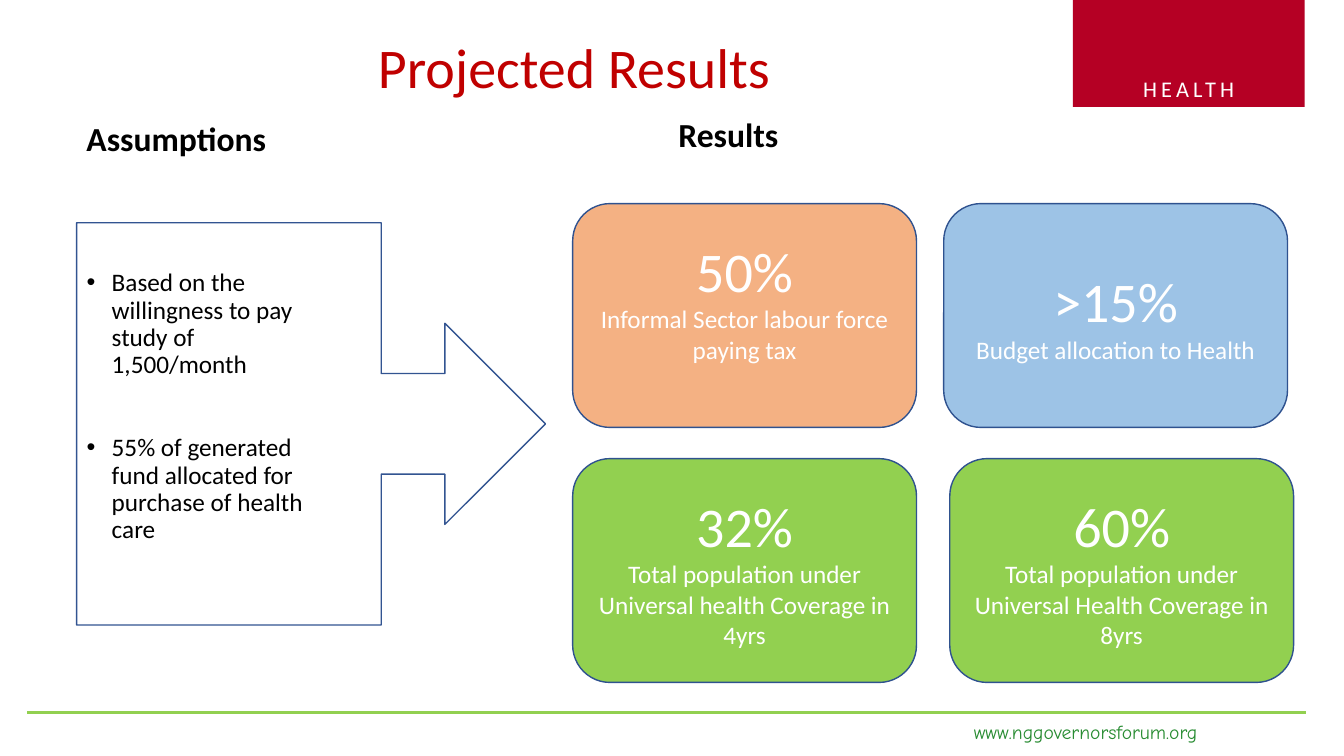
from lxml.etree import SubElement
from pptx import Presentation
from pptx.dml.color import RGBColor
from pptx.enum.shapes import MSO_CONNECTOR, MSO_SHAPE
from pptx.enum.text import MSO_ANCHOR, PP_ALIGN
from pptx.oxml.ns import qn
from pptx.util import Inches, Pt

HEADINGS = [
    ("Projected Results", (3.65, 0.23, 5.81, 0.93), MSO_ANCHOR.MIDDLE,
     {"size": 40, "color": "C00000"}),
    ("Assumptions", (0.76, 1.12, 5.64, 0.5), MSO_ANCHOR.BOTTOM, {"size": 24, "bold": True}),
    ("Results", (6.63, 1.09, 5.67, 0.49), MSO_ANCHOR.BOTTOM, {"size": 24, "bold": True}),
]
ASSUMPTIONS = [
    "Based on the willingness to pay study of 1,500/month",
    "55% of generated fund allocated for purchase of health care",
]
# figure, caption, left, row, fill, bottom inset
RESULTS = [
    ("50%", "Informal Sector labour force paying tax", 5.68, 0, "F4B183", 0.35),
    ("32%", "Total population under Universal health Coverage in 4yrs", 5.68, 1, "92D050", 0.05),
    (">15%", "Budget allocation to Health", 9.36, 0, "9DC3E6", 0.05),
    ("60%", "Total population under Universal Health Coverage in 8yrs", 9.42, 1, "92D050", 0.05),
]
CARD_WIDTH, CARD_HEIGHT = 3.41, 2.22
CARDS_TOP, ROW_STEP = 2.02, 2.53
CALLOUT = (0.76, 2.21, 4.65, 3.99)
ASSUMPTIONS_WIDTH = 2.51


def rgb(value):
    return RGBColor.from_string(value)


def add_paragraph(frame, text, size, color="000000", font="Calibri", bold=False, **layout):
    """Fill the first paragraph while it is empty, otherwise append one."""
    para = frame.paragraphs[0]
    if para.runs:
        para = frame.add_paragraph()
    for name, value in layout.items():
        setattr(para, name, value)
    span = para.add_run()
    span.text = text
    for name, value in {"name": font, "size": Pt(size), "bold": bold}.items():
        setattr(span.font, name, value)
    span.font.color.rgb = rgb(color)
    return para


def add_text_box(page, place, anchor=MSO_ANCHOR.TOP):
    frame = page.shapes.add_textbox(*map(Inches, place)).text_frame
    frame.word_wrap = True
    frame.vertical_anchor = anchor
    return frame


def add_box(page, kind, place, fill=None, line=None):
    box = page.shapes.add_shape(kind, *map(Inches, place))
    box.shadow.inherit = False
    if fill:
        box.fill.solid()
        box.fill.fore_color.rgb = rgb(fill)
    else:
        box.fill.background()
    if line:
        box.line.color.rgb = rgb(line)
        box.line.width = Pt(1)
    else:
        box.line.fill.background()
    return box


def add_bullet(para):
    properties = para._p.get_or_add_pPr()
    properties.set("marL", str(Inches(0.25)))
    properties.set("indent", str(-Inches(0.25)))
    SubElement(properties, qn("a:buFont"), typeface="Arial")
    SubElement(properties, qn("a:buChar"), char="•")


def add_page_frame(page):
    tag = add_box(page, MSO_SHAPE.RECTANGLE, (10.64, -0.01, 2.3, 1.07), "B50024")
    tag.text_frame.vertical_anchor = MSO_ANCHOR.BOTTOM
    label = add_paragraph(tag.text_frame, "HEALTH", 16, "FFFFFF", alignment=PP_ALIGN.CENTER)
    label.runs[0].font._element.set("spc", "300")

    rule = page.shapes.add_connector(
        MSO_CONNECTOR.STRAIGHT, *map(Inches, (0.27, 7.07, 12.95, 7.07)))
    rule.line.color.rgb = rgb("92D050")
    rule.line.width = Pt(2.25)
    SubElement(rule._element.spPr, qn("a:effectLst"))

    address = add_text_box(page, (9.56, 7.09, 2.86, 0.34))
    add_paragraph(address, "www.nggovernorsforum.org", 14, "288C32", "Comic Neue")


def add_results(page):
    for figure, caption, left, row, fill, bottom in RESULTS:
        place = (left, CARDS_TOP + row * ROW_STEP, CARD_WIDTH, CARD_HEIGHT)
        card = add_box(page, MSO_SHAPE.ROUNDED_RECTANGLE, place, fill, "2F528F")
        frame = card.text_frame
        frame.word_wrap = True
        frame.vertical_anchor = MSO_ANCHOR.MIDDLE
        frame.margin_bottom = Inches(bottom)
        for text, size in ((figure, 40), (caption, 18)):
            add_paragraph(frame, text, size, "FFFFFF", alignment=PP_ALIGN.CENTER)


def add_assumptions(page):
    add_box(page, MSO_SHAPE.RIGHT_ARROW_CALLOUT, CALLOUT, line="325491")
    left, top, _, height = CALLOUT
    frame = add_text_box(page, (left, top, ASSUMPTIONS_WIDTH, height))
    frame.margin_top = Inches(0.47)
    for index, text in enumerate(ASSUMPTIONS):
        para = add_paragraph(frame, text, 18, line_spacing=0.9,
                             space_before=Pt(40 if index else 0))
        add_bullet(para)


def main():
    deck = Presentation()
    deck.slide_width, deck.slide_height = Inches(13.33), Inches(7.5)
    page = deck.slides.add_slide(deck.slide_layouts[6])
    add_page_frame(page)
    for text, place, anchor, style in HEADINGS:
        add_paragraph(add_text_box(page, place, anchor), text, line_spacing=0.9, **style)
    add_results(page)
    add_assumptions(page)
    deck.save("out.pptx")


if __name__ == "__main__":
    main()
